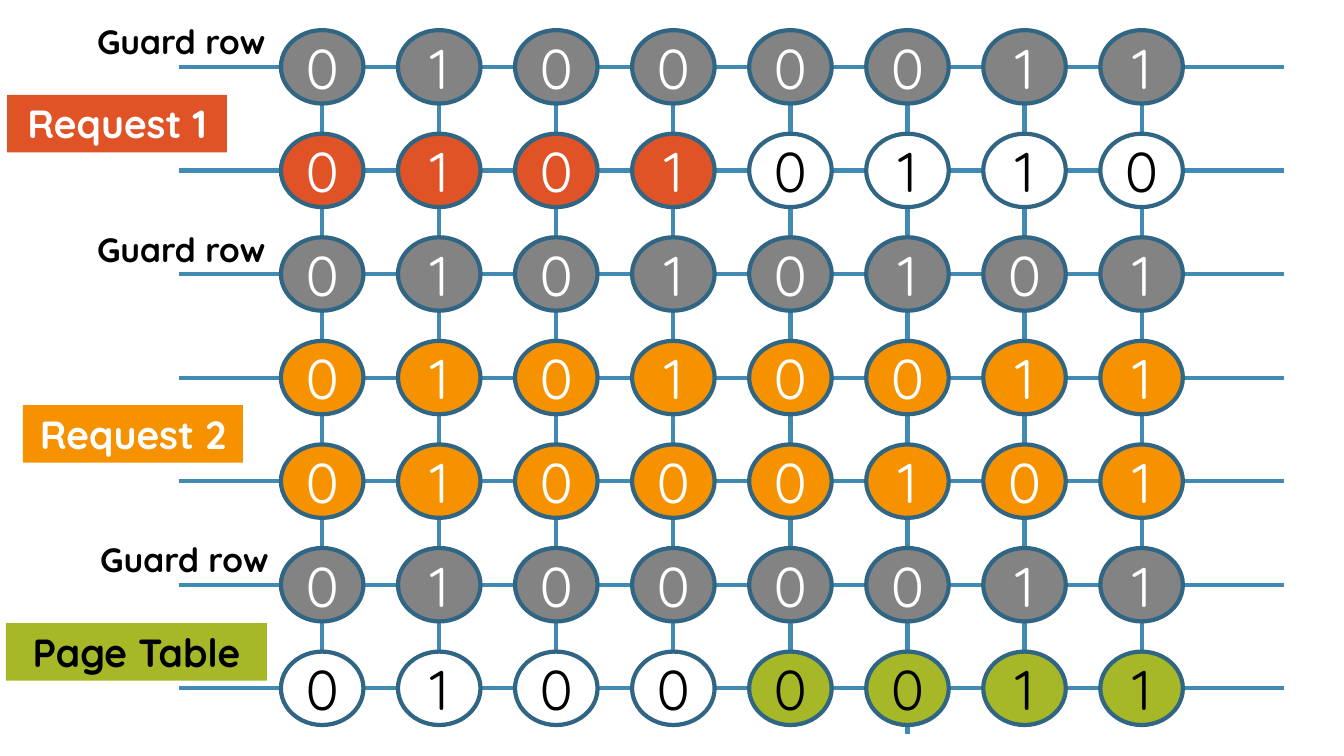
from lxml import etree
from pptx import Presentation
from pptx.dml.color import RGBColor
from pptx.enum import shapes, text
from pptx.oxml.ns import qn
from pptx.util import Cm, Pt

WHITE = RGBColor(0xFF, 0xFF, 0xFF)
BLACK = RGBColor(0x00, 0x00, 0x00)
GRAY = RGBColor(0x83, 0x83, 0x83)
RED = RGBColor(0xDF, 0x53, 0x27)
ORANGE = RGBColor(0xF6, 0x92, 0x00)
GREEN = RGBColor(0xA6, 0xB7, 0x27)
WIRE = RGBColor(0x41, 0x8A, 0xB3)
OUTLINE = RGBColor(0x30, 0x66, 0x84)
FONT = "Quicksand"

# Cell grid
CELL_W, CELL_H = Cm(2.08), Cm(1.85)
COL_PITCH, ROW_PITCH = Cm(2.95), Cm(2.61)
ROW_LEAD = Cm(2.58)  # wire to the left of the first cell
ODD_COLUMN, ODD_EXTRA = 5, Cm(0.23)  # this column wire runs on a little

# Bits of each row, fill of its left and right half
ROWS = [
    ("01000011", GRAY, GRAY),
    ("01010110", RED, WHITE),
    ("01010101", GRAY, GRAY),
    ("01010011", ORANGE, ORANGE),
    ("01000101", ORANGE, ORANGE),
    ("01000011", GRAY, GRAY),
    ("01000011", WHITE, GREEN),
]

# Left, top in cm
GUARD_LABELS = [(1.98, 0.41), (1.98, 5.64), (2.06, 13.46)]
# Text, left, top, width in cm, fill, text colour
TAGS = [
    ("Page Table", 0.15, 15.7, 6.58, GREEN, BLACK),
    ("Request 1", 0.18, 2.39, 5.54, RED, WHITE),
    ("Request 2", 0.58, 10.21, 5.54, ORANGE, WHITE),
]


def add_wire(parent, x1, y1, x2, y2):
    line = parent.add_connector(shapes.MSO_CONNECTOR.STRAIGHT, x1, y1, x2, y2)
    line.line.color.rgb = WIRE
    line.line.width = Pt(3)
    etree.SubElement(line._element.spPr, qn("a:effectLst"))


def set_text(sp, words, size, color, bold=False):
    tf = sp.text_frame
    tf.word_wrap = True
    p = tf.paragraphs[0]
    p.text = words
    p.alignment = text.PP_ALIGN.CENTER
    p.font.name = FONT
    p.font.size = Pt(size)
    p.font.bold = bold
    p.font.color.rgb = color
    return tf


def add_cell(parent, left, top, bit, fill):
    sp = parent.add_shape(shapes.MSO_SHAPE.OVAL, left, top, CELL_W, CELL_H)
    sp.shadow.inherit = False
    sp.fill.solid()
    sp.fill.fore_color.rgb = fill
    sp.line.color.rgb = OUTLINE
    sp.line.width = Pt(3)
    tf = set_text(sp, bit, 40, BLACK if fill in (WHITE, GREEN) else WHITE)
    tf.vertical_anchor = text.MSO_ANCHOR.MIDDLE


def add_row(s, left, top, width, bits, left_fill, right_fill):
    row = s.shapes.add_group_shape().shapes
    middle = top + CELL_H // 2
    add_wire(row, left, middle, left + width, middle)
    for i, bit in enumerate(bits):
        fill = left_fill if i < len(bits) // 2 else right_fill
        add_cell(row, left + ROW_LEAD + i * COL_PITCH, top, bit, fill)


def add_memory_grid(s, left, top, width):
    # Column wires, behind the rows
    bottom = top + (len(ROWS) - 1) * ROW_PITCH + CELL_H
    for i in range(len(ROWS[0][0])):
        x = left + ROW_LEAD + i * COL_PITCH + CELL_W // 2
        extra = ODD_EXTRA if i == ODD_COLUMN else 0
        add_wire(s.shapes, x, top, x, bottom + extra)
    # Rows of cells
    for i, row in enumerate(ROWS):
        add_row(s, left, top + i * ROW_PITCH, width, *row)


def add_guard_label(s, left, top):
    sp = s.shapes.add_textbox(left, top, Cm(5.18), Cm(1.27))
    tf = set_text(sp, "Guard row", 24, BLACK, bold=True)
    tf.auto_size = text.MSO_AUTO_SIZE.SHAPE_TO_FIT_TEXT


def add_tag(s, left, top, width, words, fill, color):
    sp = s.shapes.add_shape(shapes.MSO_SHAPE.RECTANGLE, left, top, width, Cm(1.45))
    sp.shadow.inherit = False
    sp.fill.solid()
    sp.fill.fore_color.rgb = fill
    sp.line.fill.background()
    tf = set_text(sp, words, 28, color, bold=True)
    tf.vertical_anchor = text.MSO_ANCHOR.TOP
    tf.auto_size = text.MSO_AUTO_SIZE.SHAPE_TO_FIT_TEXT


def main():
    prs = Presentation()
    prs.slide_width, prs.slide_height = Cm(33.87), Cm(19.05)
    s = prs.slides.add_slide(prs.slide_layouts[6])
    add_memory_grid(s, Cm(4.5), Cm(0.76), Cm(27.86))
    for left, top in GUARD_LABELS:
        add_guard_label(s, Cm(left), Cm(top))
    for words, left, top, width, fill, color in TAGS:
        add_tag(s, Cm(left), Cm(top), Cm(width), words, fill, color)
    prs.save("out.pptx")


if __name__ == "__main__":
    main()
